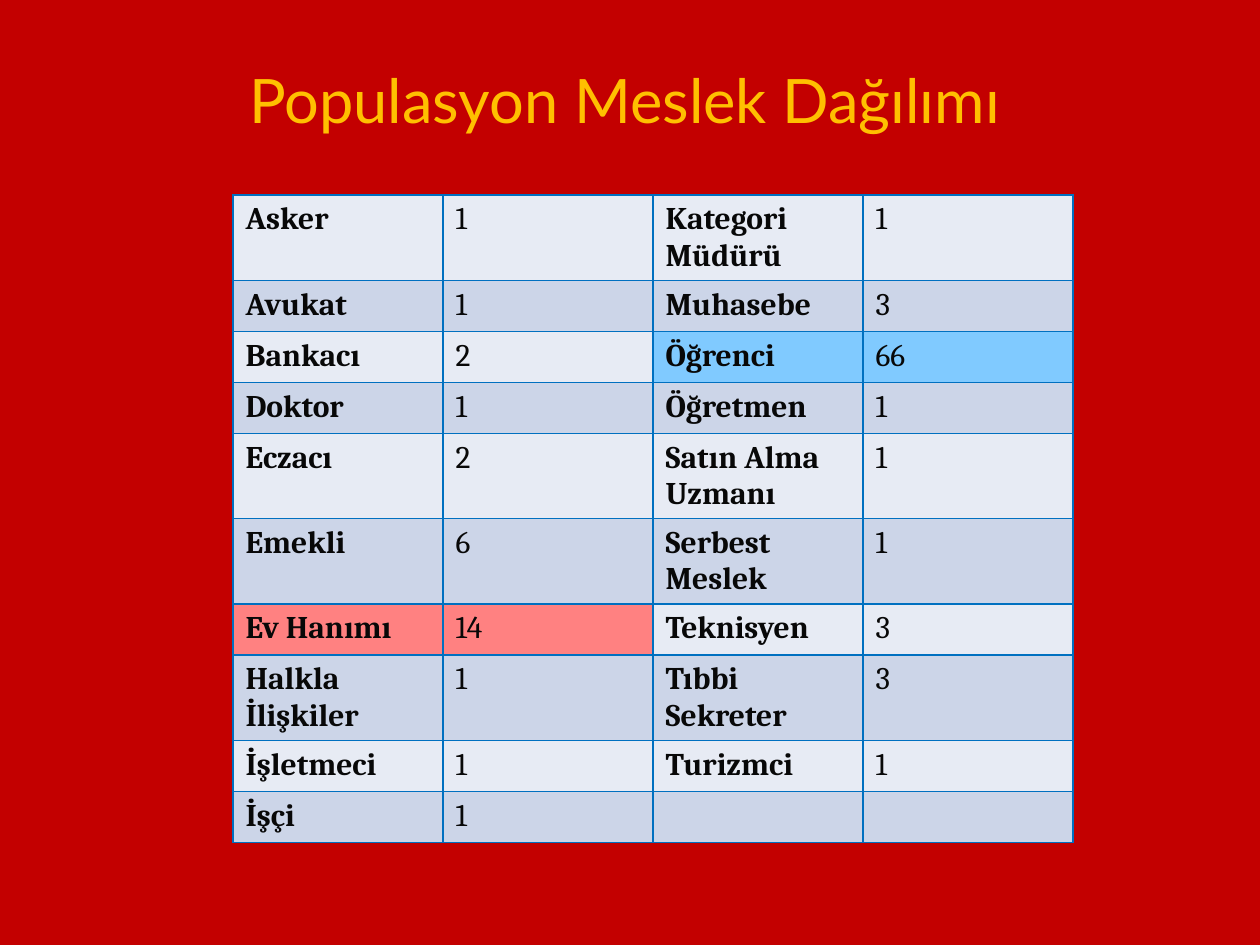
from lxml.etree import SubElement
from pptx import Presentation
from pptx.dml.color import RGBColor
from pptx.enum.text import MSO_ANCHOR, PP_ALIGN
from pptx.oxml.ns import qn
from pptx.util import Emu, Pt

COLORS = {
    "background": "C30000",
    "title": "FFC000",
    "text": "080808",
    "border": "0070C0",
    "light": "E7EBF4",
    "dark": "CCD5E8",
    "Öğrenci": "80CAFF",
    "Ev Hanımı": "FF8181",
}
ROWS = [
    ("Asker", "1", "Kategori Müdürü", "1"),
    ("Avukat", "1", "Muhasebe", "3"),
    ("Bankacı", "2", "Öğrenci", "66"),
    ("Doktor", "1", "Öğretmen", "1"),
    ("Eczacı", "2", "Satın Alma Uzmanı", "1"),
    ("Emekli", "6", "Serbest Meslek", "1"),
    ("Ev Hanımı", "14", "Teknisyen", "3"),
    ("Halkla İlişkiler", "1", "Tıbbi Sekreter", "3"),
    ("İşletmeci", "1", "Turizmci", "1"),
    ("İşçi", "1", "", ""),
]


def px(n):
    """Turn px into EMU at 126 px to the inch."""
    return Emu(round(n * 914400 / 126))


def color(name):
    """Look up a palette colour."""
    return RGBColor.from_string(COLORS[name])


def add_run(p, text, font, size, fill, bold=False):
    """Add one formatted run to a paragraph."""
    r = p.add_run()
    r.text = text
    r.font.name = font
    r.font.size = Pt(size)
    r.font.bold = bold
    r.font.color.rgb = color(fill)


def add_borders(cell):
    """Draw a 1 pt line on every side of a cell."""
    tcPr = cell._tc.get_or_add_tcPr()
    for side in ("a:lnL", "a:lnR", "a:lnT", "a:lnB"):
        ln = SubElement(tcPr, qn(side), w=str(Pt(1)))
        fill = SubElement(ln, qn("a:solidFill"))
        SubElement(fill, qn("a:srgbClr"), val=COLORS["border"])


def fill_title(s, left, top, width, height):
    """Place the slide title in its box."""
    sp = s.shapes.title
    sp.left, sp.top, sp.width, sp.height = map(px, (left, top, width, height))
    tf = sp.text_frame
    tf.word_wrap = False
    tf.vertical_anchor = MSO_ANCHOR.MIDDLE
    p = tf.paragraphs[0]
    p.alignment = PP_ALIGN.CENTER
    add_run(p, "Populasyon Meslek Dağılımı", "Lato", 35, "title")


def add_occupations(s, left, top, width, row_height):
    """Add the table of occupations and head counts."""
    box = map(px, (left, top, width, row_height * len(ROWS)))
    table = s.shapes.add_table(len(ROWS), len(ROWS[0]), *box).table
    table.first_row = False
    for i, row in enumerate(ROWS):
        band = "dark" if i % 2 else "light"
        for j, text in enumerate(row):
            cell = table.cell(i, j)
            label = row[j - j % 2]
            add_borders(cell)
            cell.fill.solid()
            cell.fill.fore_color.rgb = color(label if label in COLORS else band)
            if text:
                p = cell.text_frame.paragraphs[0]
                add_run(p, text, "Cambria", 18, "text", bold=j % 2 == 0)


def main():
    """Build and save the slide."""
    prs = Presentation()
    prs.slide_width, prs.slide_height = px(1260), px(945)
    s = prs.slides.add_slide(prs.slide_layouts[5])
    s.background.fill.solid()
    s.background.fill.fore_color.rgb = color("background")
    add_occupations(s, 233, 195, 840, 51)
    fill_title(s, 233, 55, 784, 87)
    prs.save("out.pptx")


if __name__ == "__main__":
    main()
